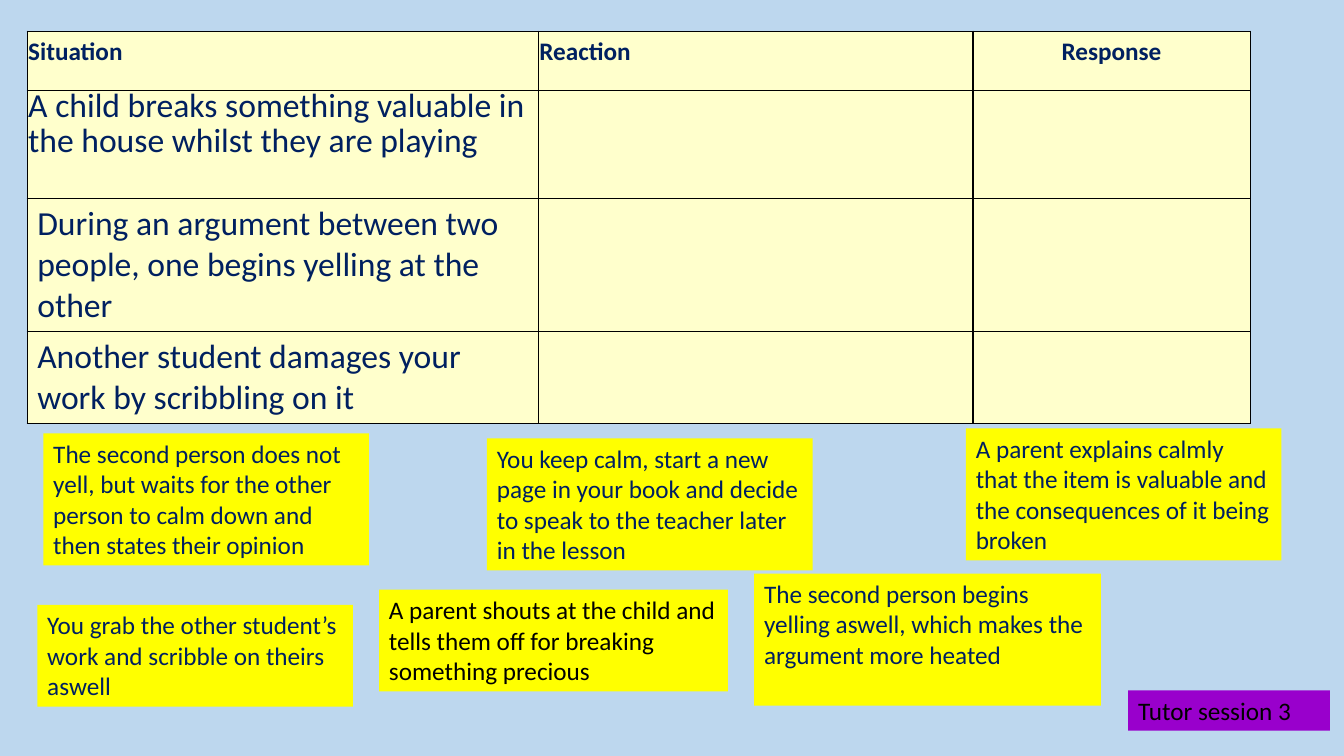
from dataclasses import dataclass

from lxml import etree
from pptx import Presentation
from pptx.dml.color import RGBColor
from pptx.enum.shapes import MSO_SHAPE
from pptx.enum.text import MSO_ANCHOR, MSO_AUTO_SIZE, PP_ALIGN
from pptx.oxml.ns import qn
from pptx.util import Inches, Pt


@dataclass(frozen=True)
class Theme:
    font: str = "Calibri"
    background: str = "BDD7EE"
    table_fill: str = "FFFFCC"
    border: str = "000000"
    card: str = "FFFF00"
    label: str = "9900CC"
    navy: str = "002060"
    black: str = "000000"
    body_size: int = 18
    situation_size: int = 24


class SlideBuilder:
    def __init__(self, slide, theme):
        self.slide = slide
        self.theme = theme
        self.paint(slide.background.fill, theme.background)

    def paint(self, fill, color):
        fill.solid()
        fill.fore_color.rgb = RGBColor.from_string(color)

    def add_text(self, paragraph, text, size, color, bold=False):
        run = paragraph.add_run()
        run.text = text
        run.font.name = self.theme.font
        run.font.size = Pt(size)
        run.font.bold = bold
        run.font.color.rgb = RGBColor.from_string(color)

    def box(self, text, left, top, width, height, fill, color, fit=True):
        shape = self.slide.shapes.add_shape(
            MSO_SHAPE.RECTANGLE, Inches(left), Inches(top), Inches(width), Inches(height))
        shape.shadow.inherit = False
        self.paint(shape.fill, fill)
        shape.line.fill.background()
        frame = shape.text_frame
        frame.word_wrap = True
        frame.auto_size = MSO_AUTO_SIZE.SHAPE_TO_FIT_TEXT if fit else MSO_AUTO_SIZE.NONE
        frame.vertical_anchor = MSO_ANCHOR.TOP
        paragraph = frame.paragraphs[0]
        paragraph.alignment = PP_ALIGN.LEFT
        self.add_text(paragraph, text, self.theme.body_size, color)

    def border_cell(self, cell):
        properties = cell._tc.get_or_add_tcPr()
        for side in ("lnL", "lnR", "lnT", "lnB"):
            line = etree.SubElement(properties, qn(f"a:{side}"), w=str(Pt(1)))
            fill = etree.SubElement(line, qn("a:solidFill"))
            etree.SubElement(fill, qn("a:srgbClr"), val=self.theme.border)

    def tighten(self, cell):
        """Give a cell narrow margins and exact line spacing."""
        cell.margin_left = cell.margin_right = Inches(0.01)
        cell.margin_top = cell.margin_bottom = Inches(0.01)
        paragraph = cell.text_frame.paragraphs[0]
        paragraph.line_spacing = Pt(24.8)
        paragraph.space_after = Pt(8)

    def table(self, left, top, widths, heights, headings, situations):
        table = self.slide.shapes.add_table(
            len(heights), len(widths), Inches(left), Inches(top),
            Inches(sum(widths)), Inches(sum(heights))).table
        table.first_row = table.horz_banding = False
        for column, width in zip(table.columns, widths):
            column.width = Inches(width)
        for row, height in zip(table.rows, heights):
            row.height = Inches(height)
        for cell in table.iter_cells():
            self.border_cell(cell)
            self.paint(cell.fill, self.theme.table_fill)

        for index, heading in enumerate(headings):
            cell = table.cell(0, index)
            self.tighten(cell)
            self.add_text(cell.text_frame.paragraphs[0], heading,
                          self.theme.body_size, self.theme.navy, bold=True)
        table.cell(0, len(headings) - 1).text_frame.paragraphs[0].alignment = PP_ALIGN.CENTER

        self.tighten(table.cell(1, 0))
        for index, situation in enumerate(situations, start=1):
            self.add_text(table.cell(index, 0).text_frame.paragraphs[0], situation,
                          self.theme.situation_size, self.theme.navy)


def main():
    presentation = Presentation()
    presentation.slide_width = Inches(13.33)
    presentation.slide_height = Inches(7.5)
    theme = Theme()
    builder = SlideBuilder(
        presentation.slides.add_slide(presentation.slide_layouts[6]), theme)

    builder.table(
        0.27, 0.31, (5.07, 4.31, 2.75), (0.59, 1.07, 1.32, 0.91),
        ("Situation", "Reaction", "Response"),
        ("A child breaks something valuable in the house whilst they are playing",
         "During an argument between two people, one begins yelling at the other",
         "Another student damages your work by scribbling on it"))

    cards = (
        ("A parent shouts at the child and tells them off for breaking something precious",
         3.76, 5.85, 3.46, 1.01, theme.card, theme.black),
        ("A parent explains calmly that the item is valuable and the consequences "
         "of it being broken", 9.58, 4.25, 3.13, 1.31, theme.card, theme.navy),
        ("The second person begins yelling aswell, which makes the argument more heated",
         7.48, 5.69, 3.44, 1.31, theme.card, theme.navy, False),
        ("The second person does not yell, but waits for the other person to calm down "
         "and then states their opinion", 0.43, 4.3, 3.23, 1.31, theme.card, theme.navy),
        ("You grab the other student’s work and scribble on theirs aswell",
         0.37, 6, 3.13, 1.01, theme.card, theme.navy),
        ("You keep calm, start a new page in your book and decide to speak to the "
         "teacher later in the lesson", 4.83, 4.35, 3.23, 1.31, theme.card, theme.navy),
        ("Tutor session 3", 11.19, 6.85, 2, 0.4, theme.label, theme.black),
    )
    for card in cards:
        builder.box(*card)

    presentation.save("out.pptx")


if __name__ == "__main__":
    main()
